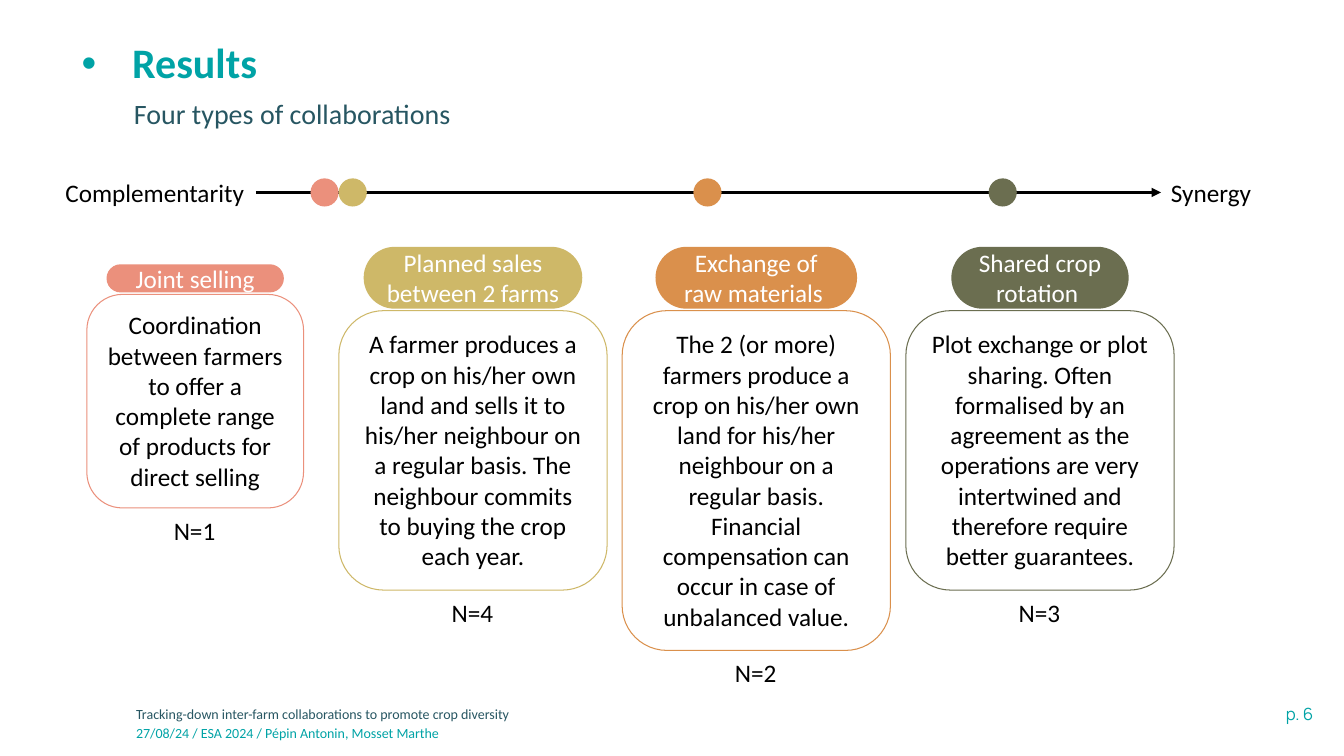
from dataclasses import dataclass

from lxml.etree import SubElement
from pptx import Presentation
from pptx.dml.color import RGBColor
from pptx.enum.shapes import MSO_CONNECTOR, MSO_SHAPE
from pptx.enum.text import MSO_ANCHOR, MSO_AUTO_SIZE, PP_ALIGN
from pptx.oxml.ns import qn
from pptx.shapes.autoshape import Shape
from pptx.slide import Slide
from pptx.text.text import TextFrame
from pptx.util import Cm, Pt


@dataclass(frozen=True)
class Theme:
    teal: str = "00A3A6"
    petrol: str = "275662"
    black: str = "000000"
    white: str = "FFFFFF"
    font: str = "Calibri"
    page_font: str = "Manrope"
    title_size: int = 30
    subtitle_size: int = 20
    body_size: int = 18
    page_size: int = 12
    footer_size: int = 10


@dataclass(frozen=True)
class Area:
    left: float
    top: float
    width: float
    height: float


@dataclass(frozen=True)
class Collaboration:
    name: str
    description: str
    count: int
    color: str
    center: float
    dot_center: float
    name_width: float
    name_height: float
    card_top: float
    card_width: float
    card_height: float


@dataclass(frozen=True)
class Caption:
    text: str
    area: Area
    size: int
    color: str
    font: str = Theme.font
    align: PP_ALIGN = PP_ALIGN.LEFT
    wrap: bool = True


THEME = Theme()
AXIS_Y = 4.85
AXIS_START = 6.45
AXIS_END = 29.26
DOT_SIZE = 0.71
LABEL_HEIGHT = 1.02
COUNT_WIDTH = 1.58
GAP = 0.05

COLLABORATIONS = [
    Collaboration(
        "Joint selling",
        "Coordination between farmers to offer a complete range of products for direct selling",
        1, "EB907C", 4.92, 8.18, 4.47, 0.71, 7.42, 5.46, 5.38),
    Collaboration(
        "Planned sales between 2 farms",
        "A farmer produces a crop on his/her own land and sells it to his/her neighbour "
        "on a regular basis. The neighbour commits to buying the crop each year.",
        4, "CEB868", 11.92, 8.89, 5.51, 1.56, 7.83, 6.76, 7.04),
    Collaboration(
        "Exchange of raw materials ",
        "The 2 (or more) farmers produce a crop on his/her own land for his/her neighbour "
        "on a regular basis. Financial compensation can occur in case of unbalanced value.",
        2, "DA904C", 19.06, 17.83, 5.08, 1.56, 7.83, 6.76, 8.56),
    Collaboration(
        "Shared crop rotation ",
        "Plot exchange or plot sharing. Often formalised by an agreement as the operations "
        "are very intertwined and therefore require better guarantees.",
        3, "6B6E50", 26.21, 25.27, 4.47, 1.56, 7.83, 6.76, 7.04),
]

CAPTIONS = [
    Caption("p. 6", Area(27.56, 17.6, 5.79, 0.76), THEME.page_size, THEME.teal,
            THEME.page_font, PP_ALIGN.RIGHT),
    Caption("Tracking-down inter-farm collaborations to promote crop diversity",
            Area(3.18, 17.65, 18.64, 0.7), THEME.footer_size, THEME.petrol),
    Caption("27/08/24 / ESA 2024 / Pépin Antonin, Mosset Marthe",
            Area(3.18, 18.14, 18.64, 0.7), THEME.footer_size, THEME.teal),
    Caption("Complementarity", Area(1.4, 4.34, 5.05, LABEL_HEIGHT),
            THEME.body_size, THEME.black, wrap=False),
    Caption("Synergy", Area(AXIS_END, 4.34, 2.57, LABEL_HEIGHT),
            THEME.body_size, THEME.black, wrap=False),
]


def centered(center: float, top: float, width: float, height: float) -> Area:
    return Area(center - width / 2, top, width, height)


def place(area: Area) -> tuple[Cm, Cm, Cm, Cm]:
    return Cm(area.left), Cm(area.top), Cm(area.width), Cm(area.height)


def write(frame: TextFrame, text: str, size: int, color: str, font: str = THEME.font,
          align: PP_ALIGN = PP_ALIGN.LEFT, bold: bool = False) -> None:
    frame.text = text
    para = frame.paragraphs[0]
    para.alignment = align
    for span in para.runs:
        span.font.name = font
        span.font.size = Pt(size)
        span.font.bold = bold
        span.font.color.rgb = RGBColor.from_string(color)


def add_caption(page: Slide, caption: Caption) -> None:
    frame = page.shapes.add_textbox(*place(caption.area)).text_frame
    frame.word_wrap = caption.wrap
    frame.auto_size = MSO_AUTO_SIZE.SHAPE_TO_FIT_TEXT
    write(frame, caption.text, caption.size, caption.color, caption.font, caption.align)


def add_filled(page: Slide, kind: MSO_SHAPE, area: Area, color: str) -> Shape:
    shape = page.shapes.add_shape(kind, *place(area))
    shape.shadow.inherit = False
    shape.fill.solid()
    shape.fill.fore_color.rgb = RGBColor.from_string(color)
    shape.line.fill.background()
    return shape


def add_headings(page: Slide) -> None:
    title, subtitle = page.placeholders
    title.left, title.top, title.width, title.height = place(Area(2.06, 0.41, 28.37, 2.46))
    frame = title.text_frame
    frame.margin_left = 0
    frame.vertical_anchor = MSO_ANCHOR.MIDDLE
    write(frame, "Results", THEME.title_size, THEME.teal, bold=True)
    properties = frame.paragraphs[0]._p.get_or_add_pPr()
    properties.set("marL", str(Cm(1.27)))
    properties.set("indent", str(Cm(-1.27)))
    SubElement(properties, qn("a:buFont"), typeface="Arial")
    SubElement(properties, qn("a:buChar"), char="•")

    subtitle.left, subtitle.top, subtitle.width, subtitle.height = place(
        Area(3.12, 2.39, 27.33, 1.88))
    subtitle.text_frame.vertical_anchor = MSO_ANCHOR.TOP
    write(subtitle.text_frame, "Four types of collaborations",
          THEME.subtitle_size, THEME.petrol)
    for heading in (title, subtitle):
        heading.text_frame.auto_size = MSO_AUTO_SIZE.NONE
        heading.text_frame.paragraphs[0].line_spacing = 0.9
        heading.text_frame.paragraphs[0].space_before = Pt(0)


def add_axis(page: Slide) -> None:
    axis = page.shapes.add_connector(
        MSO_CONNECTOR.STRAIGHT, Cm(AXIS_START), Cm(AXIS_Y), Cm(AXIS_END), Cm(AXIS_Y))
    axis.line.color.rgb = RGBColor.from_string(THEME.black)
    axis.line.width = Pt(2.25)
    SubElement(axis.line._get_or_add_ln(), qn("a:tailEnd"), type="triangle")
    SubElement(axis._element.spPr, qn("a:effectLst"))


def add_collaboration(page: Slide, item: Collaboration) -> None:
    dot = centered(item.dot_center, AXIS_Y - DOT_SIZE / 2, DOT_SIZE, DOT_SIZE)
    add_filled(page, MSO_SHAPE.OVAL, dot, item.color)

    name_top = item.card_top - GAP - item.name_height
    name_area = centered(item.center, name_top, item.name_width, item.name_height)
    name = add_filled(page, MSO_SHAPE.ROUNDED_RECTANGLE, name_area, item.color)
    name.adjustments[0] = 0.5
    name.text_frame.word_wrap = True
    name.text_frame.vertical_anchor = MSO_ANCHOR.MIDDLE
    write(name.text_frame, item.name, THEME.body_size, THEME.white, align=PP_ALIGN.CENTER)

    card_area = centered(item.center, item.card_top, item.card_width, item.card_height)
    card = page.shapes.add_shape(MSO_SHAPE.ROUNDED_RECTANGLE, *place(card_area))
    card.shadow.inherit = False
    card.fill.background()
    card.line.color.rgb = RGBColor.from_string(item.color)
    card.line.width = Pt(0.75)
    card.text_frame.word_wrap = True
    card.text_frame.auto_size = MSO_AUTO_SIZE.SHAPE_TO_FIT_TEXT
    card.text_frame.vertical_anchor = MSO_ANCHOR.TOP
    write(card.text_frame, item.description, THEME.body_size, THEME.black,
          align=PP_ALIGN.CENTER)

    count_top = item.card_top + item.card_height + GAP
    count_area = centered(item.center, count_top, COUNT_WIDTH, LABEL_HEIGHT)
    add_caption(page, Caption(f"N={item.count}", count_area, THEME.body_size,
                              THEME.black, wrap=False))


def main() -> None:
    deck = Presentation()
    deck.slide_width, deck.slide_height = Cm(33.87), Cm(19.05)
    page = deck.slides.add_slide(deck.slide_layouts[0])
    add_headings(page)
    add_axis(page)
    for item in COLLABORATIONS:
        add_collaboration(page, item)
    for caption in CAPTIONS:
        add_caption(page, caption)
    deck.save("out.pptx")


if __name__ == "__main__":
    main()
